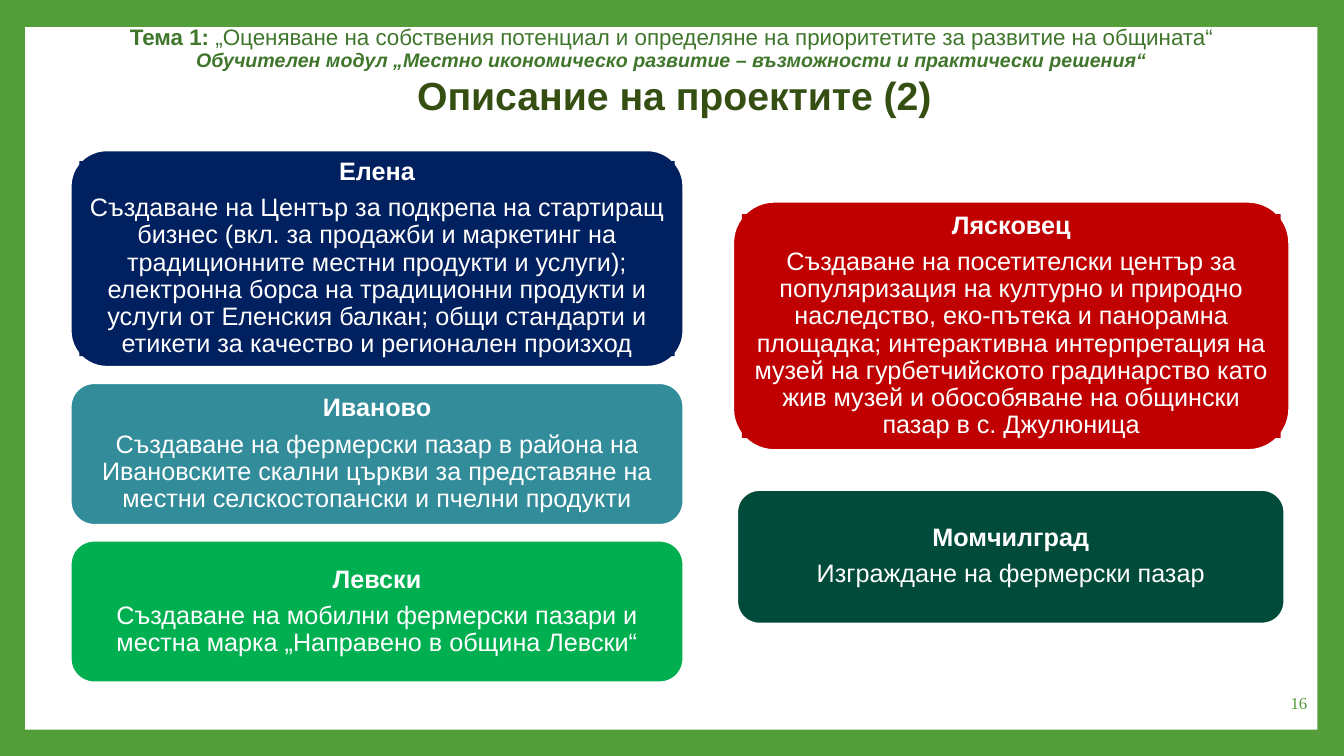
"""Builds the slide on municipal project descriptions."""
from pptx import Presentation
from pptx.dml.color import RGBColor
from pptx.enum.shapes import MSO_SHAPE
from pptx.enum.text import MSO_ANCHOR, MSO_AUTO_SIZE, PP_ALIGN
from pptx.util import Pt

RECT, ROUND = MSO_SHAPE.RECTANGLE, MSO_SHAPE.ROUNDED_RECTANGLE
TOP, MIDDLE = MSO_ANCHOR.TOP, MSO_ANCHOR.MIDDLE
CENTER, RIGHT = PP_ALIGN.CENTER, PP_ALIGN.RIGHT
NO_FIT = MSO_AUTO_SIZE.NONE
TITLE_ONLY = 5

COLORS = {
    "frame": "549E39", "white": "FFFFFF", "title": "354F12", "header": "3F762B",
    "navy": "002060", "teal": "328C99", "green": "00B050",
    "red": "C00000", "forest": "014B3B",
}
LEFT_X, LEFT_W = 50.4, 437.8
CARD_INSET_X, CARD_INSET_RATIO = 6.3, 0.05
CARDS = [
    ("Елена",
     "Създаване на Център за подкрепа на стартиращ бизнес (вкл. за продажби и маркетинг на "
     "традиционните местни продукти и услуги); електронна борса на традиционни продукти и "
     "услуги от Еленския балкан; общи стандарти и етикети за качество и регионален произход",
     "navy", (LEFT_X, 107.3, LEFT_W, 154.8)),
    ("Иваново",
     "Създаване на фермерски пазар в района на Ивановските скални църкви за представяне на "
     "местни селскостопански и пчелни продукти",
     "teal", (LEFT_X, 273.6, LEFT_W, 101.4)),
    ("Левски",
     "Създаване на мобилни фермерски пазари и местна марка „Направено в община Левски“",
     "green", (LEFT_X, 386.1, LEFT_W, 101.4)),
    ("Лясковец",
     "Създаване на посетителски център за популяризация на културно и природно наследство, "
     "еко-пътека и панорамна площадка; интерактивна интерпретация на музей на гурбетчийското "
     "градинарство като жив музей и обособяване на общински пазар в с. Джулюница",
     "red", (523.6, 144, 397.4, 177.6)),
    ("Момчилград", "Изграждане на фермерски пазар",
     "forest", (526.5, 349.9, 391, 95.6)),
]


def rgb(name):
    """Return the named colour."""
    return RGBColor.from_string(COLORS[name])


def add_text(p, text, font="Arial", size=18, color="white", bold=False, italic=False,
             align=CENTER, spacing=None, after=0):
    """Add a formatted run to a paragraph."""
    p.alignment = align
    p.line_spacing = spacing
    p.space_after = Pt(after)
    r = p.add_run()
    r.text = text
    r.font.name, r.font.size = font, Pt(size)
    r.font.bold, r.font.italic = bold, italic
    r.font.color.rgb = rgb(color)


class SlideBuilder:
    """Hold the style and the current slide."""

    def __init__(self, s):
        """Set the slide and its background."""
        self.s = s
        s.background.fill.solid()
        s.background.fill.fore_color.rgb = rgb("frame")

    def shape(self, kind, box, color, shapes=None, line=None):
        """Add a filled preset shape."""
        shapes = self.s.shapes if shapes is None else shapes
        sp = shapes.add_shape(kind, *map(Pt, box))
        sp.shadow.inherit = False
        sp.fill.solid()
        sp.fill.fore_color.rgb = rgb(color)
        if line:
            sp.line.color.rgb = rgb(line)
            sp.line.width = Pt(1.5)
        else:
            sp.line.fill.background()
        return sp

    def frame(self, sp, anchor=MIDDLE):
        """Prepare a text frame and return it."""
        tf = sp.text_frame
        tf.word_wrap = True
        tf.auto_size = NO_FIT
        tf.vertical_anchor = anchor
        return tf

    def title(self, text, box):
        """Place and fill the title placeholder."""
        sp = self.s.shapes.title
        sp.left, sp.top, sp.width, sp.height = map(Pt, box)
        tf = self.frame(sp, TOP)
        tf.margin_left = Pt(10.8)
        add_text(tf.paragraphs[0], text, size=28, color="title", bold=True)

    def textbox(self, box):
        """Add a wrapping text box and return its frame."""
        return self.frame(self.s.shapes.add_textbox(*map(Pt, box)))

    def card(self, name, text, color, box):
        """Add a rounded card with a heading and a description."""
        x, y, w, h = box
        dx, dy = CARD_INSET_X, h * CARD_INSET_RATIO
        shapes = self.s.shapes.add_group_shape().shapes
        self.shape(ROUND, box, color, shapes, line="white")
        sp = self.shape(RECT, (x + dx, y + dy, w - 2 * dx, h - 2 * dy), color, shapes)
        tf = self.frame(sp)
        tf.margin_left = tf.margin_right = tf.margin_top = tf.margin_bottom = Pt(4.3)
        add_text(tf.paragraphs[0], name, bold=True, spacing=0.9, after=6.3)
        add_text(tf.add_paragraph(), text, spacing=0.9, after=6.3)


def main():
    """Build and save the slide."""
    prs = Presentation()
    prs.slide_width, prs.slide_height = Pt(960), Pt(540)
    b = SlideBuilder(prs.slides.add_slide(prs.slide_layouts[TITLE_ONLY]))
    b.shape(RECT, (18, 19.4, 923, 501.8), "white")

    tf = b.textbox((806.4, 487.4, 134.6, 28.8))
    add_text(tf.paragraphs[0], "16", font="Times New Roman", size=12, color="frame", align=RIGHT)

    for card in CARDS:
        b.card(*card)

    title = b.s.shapes.title
    b.s.shapes.element.append(title.element)
    b.title("Описание на проектите (2)", (97.2, 47.5, 765.4, 41))

    tf = b.textbox((26.6, 20.9, 906.5, 28.1))
    p = tf.paragraphs[0]
    add_text(p, "Тема 1: ", size=16, color="header", bold=True, spacing=0.9)
    add_text(p, "„Оценяване на собствения потенциал и определяне на приоритетите за развитие "
             "на общината“", size=16, color="header", spacing=0.9)
    add_text(tf.add_paragraph(), "Обучителен модул „Местно икономическо развитие – възможности "
             "и практически решения“", size=14, color="header", bold=True, italic=True, spacing=0.9)
    prs.save("out.pptx")


if __name__ == "__main__":
    main()
